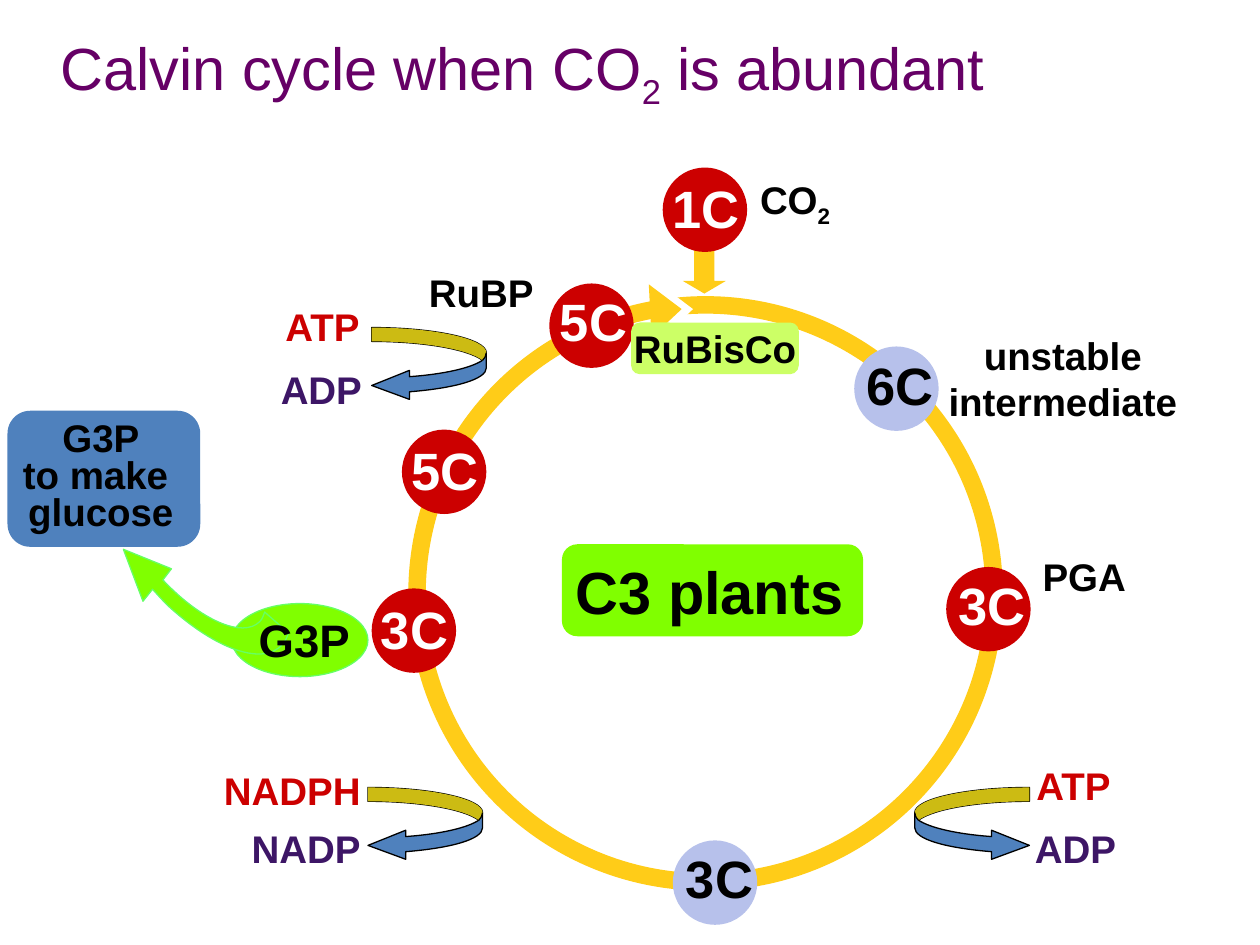
"""Builds a slide showing the Calvin cycle of C3 plants when carbon dioxide is abundant."""
from lxml import etree
from pptx import Presentation
from pptx.dml.color import RGBColor
from pptx.enum.shapes import MSO_SHAPE
from pptx.enum.text import MSO_ANCHOR, MSO_AUTO_SIZE, PP_ALIGN
from pptx.oxml.ns import qn
from pptx.util import Inches, Pt

OVAL = MSO_SHAPE.OVAL
ROUNDED = MSO_SHAPE.ROUNDED_RECTANGLE
RIGHT_ARROW = MSO_SHAPE.RIGHT_ARROW
MIDDLE = MSO_ANCHOR.MIDDLE
GROW = MSO_AUTO_SIZE.SHAPE_TO_FIT_TEXT
LEFT, CENTER = PP_ALIGN.LEFT, PP_ALIGN.CENTER

BLACK = RGBColor(0x00, 0x00, 0x00)
WHITE = RGBColor(0xFF, 0xFF, 0xFF)
PLUM = RGBColor(0x66, 0x00, 0x66)
INDIGO = RGBColor(0x3D, 0x16, 0x66)
RED = RGBColor(0xCC, 0x00, 0x00)
LAVENDER = RGBColor(0xB7, 0xC1, 0xEB)
GOLD = RGBColor(0xFF, 0xCC, 0x18)
OLIVE = RGBColor(0xCC, 0xBB, 0x13)
BLUE = RGBColor(0x4F, 0x81, 0xBD)
LIME = RGBColor(0x80, 0xFF, 0x00)
PALE_LIME = RGBColor(0xCC, 0xFF, 0x66)
MINT = RGBColor(0x66, 0xFF, 0x66)

LABEL_INSETS = (0, 0, 0.04, 0)
PANEL_INSETS = (0.04, 0.04, 0.1, 0.04)

FOLD = [(0.91, 0.2), (0.91, 0.22, 0.9, 0.24, 0.88, 0.26)]
INNER_EDGE = (0.76, 0.17, 0.4, 0.11, 0, 0.11)
OUTER_EDGE = [(0, 0), (0.5, 0, 0.91, 0.09, 0.91, 0.2)]
RIBBON = OUTER_EDGE + [
    (0.91, 0.32), (0.91, 0.41, 0.67, 0.48, 0.3, 0.51), (0.3, 0.57), (0, 0.46),
    (0.3, 0.34), (0.3, 0.39), (0.58, 0.37, 0.79, 0.32, 0.88, 0.26), INNER_EDGE,
]
UPPER_BAND = OUTER_EDGE + [FOLD[1], INNER_EDGE]
DOWN_ARROW = [
    (5.42, 2.23), (5.51, 2.23), (5.51, 1.92), (5.67, 1.92),
    (5.67, 2.23), (5.76, 2.23), (5.59, 2.33),
]
EXPORT_ARROW = [
    (1.69, 5.04), (1.68, 4.6, 1.53, 4.27, 1.34, 4.28),
    (1.31, 4.28, 1.28, 4.3, 1.26, 4.31), (1.23, 4.06),
    (1.48, 3.91, 1.72, 4.23, 1.79, 4.8), (1.8, 4.87, 1.8, 4.95, 1.8, 5.04),
    (1.92, 5.02), (1.76, 5.43), (1.58, 5.06),
]


def write_text(frame, text, size=22, color=BLACK, bold=True, align=CENTER,
               indent=0.04, spacing=None):
    """Write lines of text, with subscripts set between bars."""
    for index, line in enumerate(text.split("\n")):
        para = frame.add_paragraph() if index else frame.paragraphs[0]
        para.alignment = align
        if spacing:
            para.line_spacing = spacing
        properties = para._p.get_or_add_pPr()
        properties.set("marL", str(Inches(indent)))
        properties.set("indent", "0")
        for position, piece in enumerate(line.split("|")):
            span = para.add_run()
            span.text = piece
            span.font.name = "Arial"
            span.font.size = Pt(size)
            span.font.bold = bold
            span.font.color.rgb = color
            if position % 2:
                span.font._element.set("baseline", "-25000")


def bend(shape, points):
    """Turn the straight segments that carry control points into cubic curves."""
    contour = shape._element.find(".//" + qn("a:path"))
    for segment, point in zip(contour.findall(qn("a:lnTo")), points[1:]):
        if len(point) == 2:
            continue
        curve = etree.Element(qn("a:cubicBezTo"))
        for x, y in zip(point[::2], point[1::2]):
            etree.SubElement(curve, qn("a:pt"), x=str(Inches(x) - shape.left),
                             y=str(Inches(y) - shape.top))
        contour.replace(segment, curve)


class CycleSlide:
    """Holds the slide and draws the parts of the cycle on it."""

    def __init__(self, page):
        self.shapes = page.shapes

    def paint(self, shape, fill=None, line=None, width=0.75):
        shape.shadow.inherit = False
        if fill is None:
            shape.fill.background()
        else:
            shape.fill.solid()
            shape.fill.fore_color.rgb = fill
        if line is None:
            shape.line.fill.background()
        else:
            shape.line.color.rgb = line
            shape.line.width = Pt(width)

    def preset(self, kind, area, adjustments=(), rotation=0, **style):
        shape = self.shapes.add_shape(kind, *map(Inches, area))
        for index, value in enumerate(adjustments):
            shape.adjustments[index] = value
        shape.rotation = rotation
        self.paint(shape, **style)

    def outline(self, points, closed=True, rotation=0, **style):
        start, *rest = [tuple(map(Inches, point[-2:])) for point in points]
        builder = self.shapes.build_freeform(*start)
        builder.add_line_segments(rest, close=closed)
        shape = builder.convert_to_shape()
        bend(shape, points)
        shape.rotation = rotation
        self.paint(shape, **style)

    def label(self, text, area, insets=LABEL_INSETS, **style):
        box = self.shapes.add_textbox(*map(Inches, area))
        frame = box.text_frame
        frame.word_wrap = False
        frame.auto_size = GROW
        frame.vertical_anchor = MIDDLE
        (frame.margin_left, frame.margin_top,
         frame.margin_right, frame.margin_bottom) = map(Inches, insets)
        write_text(frame, text, **style)

    def carbon(self, text, left, top, shift=(0, 0.01), fill=RED, color=WHITE):
        self.preset(OVAL, (left, top, 0.67, 0.67), fill=fill)
        self.label(text, (left + shift[0], top + shift[1], 0.7, 0.57), size=30, color=color)

    def panel(self, text, area, fill, margin, insets=PANEL_INSETS, indent=0.01, **style):
        left, top, width, height = area
        self.preset(ROUNDED, area, (0.167,), fill=fill)
        inner = (left + margin, top + margin, width - 2 * margin, height - 2 * margin)
        self.label(text, inner, insets, indent=indent, **style)

    def carrier(self, left, top, side, spent, spent_area, charged, charged_area):
        def place(points):
            return [tuple(top + value if index % 2 else left + side * value
                          for index, value in enumerate(point)) for point in points]

        self.outline(place(RIBBON), fill=BLUE, line=BLACK)
        self.outline(place(UPPER_BAND), fill=OLIVE)
        self.outline(place(FOLD), closed=False, line=BLACK)
        self.label(spent, spent_area, color=INDIGO)
        self.label(charged, charged_area, color=RED)


def main():
    """Build the slide and save it."""
    deck = Presentation()
    deck.slide_width, deck.slide_height = Inches(10), Inches(7.5)
    cycle = CycleSlide(deck.slides.add_slide(deck.slide_layouts[6]))

    cycle.outline(DOWN_ARROW, fill=GOLD)
    cycle.preset(OVAL, (3.31, 2.42, 4.58, 4.58), line=GOLD, width=10)
    cycle.carbon("6C", 6.78, 2.75, (0.01, 0.02), LAVENDER, BLACK)
    cycle.label("unstable\nintermediate", (7.44, 2.59, 1.99, 0.82))
    cycle.carbon("1C", 5.26, 1.33, (-0.01, 0.03))
    cycle.label("CO|2", (5.94, 1.34, 0.74, 0.53))
    cycle.label("Calvin cycle when CO|2| is abundant", (0.44, 0.28, 7.48, 0.57),
                size=34, color=PLUM, bold=False, align=LEFT)
    for left, color in ((5.25, WHITE), (5.16, GOLD)):
        cycle.preset(RIGHT_ARROW, (left, 2.25, 0.25, 0.42), (0.484, 1), 357, fill=color)
    cycle.carbon("5C", 4.36, 2.25)
    cycle.label("RuBP", (3.32, 2.09, 1, 0.46))
    cycle.carbon("3C", 7.51, 4.5, (0.01, 0.01))
    cycle.label("PGA", (8.19, 4.34, 0.83, 0.46))
    cycle.carrier(8.17, 6.25, -1, "ADP", (8.13, 6.5, 0.81, 0.46),
                  "ATP", (8.14, 6, 0.76, 0.46))
    cycle.carbon("3C", 5.34, 6.67, (0.02, 0.01), LAVENDER, BLACK)
    cycle.carrier(2.92, 6.25, 1, "NADP", (1.91, 6.5, 1.04, 0.46),
                  "NADPH", (1.69, 6.04, 1.26, 0.46))
    cycle.carrier(2.95, 2.6, 1, "ADP", (2.14, 2.86, 0.82, 0.46),
                  "ATP", (2.18, 2.36, 0.76, 0.46))
    cycle.panel("G3P\nto make \nglucose", (0.06, 3.26, 1.53, 1.08), BLUE, 0.05, spacing=0.8)
    cycle.carbon("3C", 2.95, 4.67, (-0.01, 0.03))
    cycle.preset(OVAL, (1.84, 4.79, 1.08, 0.58), fill=LIME, line=MINT)
    cycle.outline(EXPORT_ARROW, rotation=138, fill=LIME, line=MINT)
    cycle.label("G3P", (1.97, 4.81, 0.89, 0.53), size=26)
    cycle.carbon("5C", 3.19, 3.41, (-0.01, 0.03))
    cycle.panel("RuBisCo", (5.01, 2.56, 1.33, 0.41), PALE_LIME, 0.01, (0, 0, 0, 0), indent=0)
    cycle.panel("C3 plants", (4.46, 4.32, 2.39, 0.73), LIME, 0.04, size=34)
    deck.save("out.pptx")


if __name__ == "__main__":
    main()
